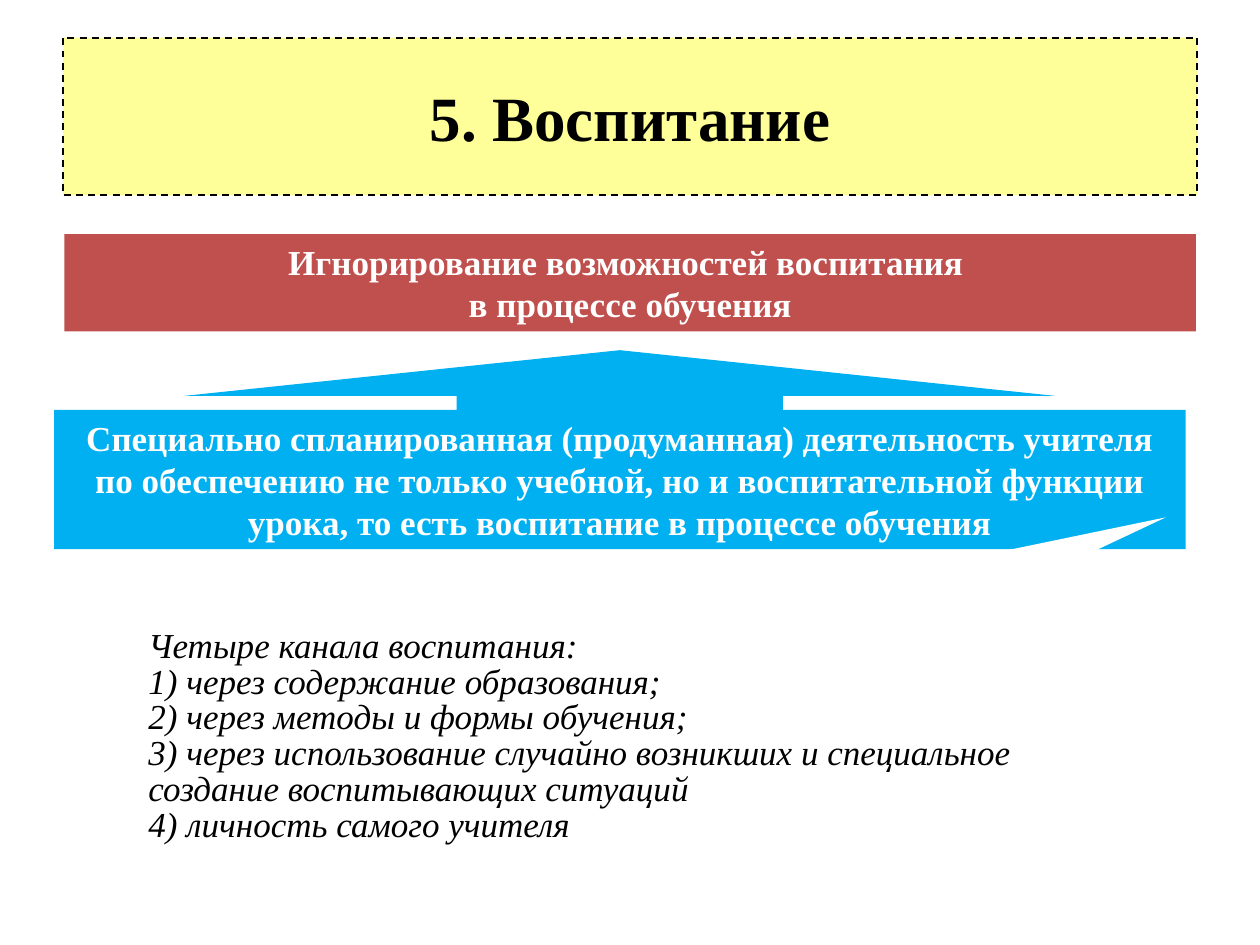
import pptx
import pptx.util
import pptx.dml.color
import pptx.enum.dml
import pptx.enum.shapes
import pptx.enum.text

Cm = pptx.util.Cm
Color = pptx.dml.color.RGBColor
Kind = pptx.enum.shapes.MSO_SHAPE
Align = pptx.enum.text.PP_ALIGN
Anchor = pptx.enum.text.MSO_ANCHOR

BLACK = Color(0x00, 0x00, 0x00)
WHITE = Color(0xFF, 0xFF, 0xFF)
YELLOW = Color(0xFF, 0xFF, 0x99)
RED = Color(0xC0, 0x50, 0x4D)
BLUE = Color(0x00, 0xB0, 0xF0)
FONT = "Times New Roman"


def add_block(slide, kind, box, fill, adjust=()):
    """Add a flat filled shape without outline; box is in centimetres."""
    shape = slide.shapes.add_shape(kind, *(Cm(n) for n in box))
    shape.shadow.inherit = False
    shape.fill.solid()
    shape.fill.fore_color.rgb = fill
    shape.line.fill.background()
    for i, value in enumerate(adjust):
        shape.adjustments[i] = value
    return shape


def set_text(shape, text, color, size=20, align=Align.CENTER,
             anchor=Anchor.TOP, bold=True, italic=False, spacing=None):
    frame = shape.text_frame
    frame.word_wrap = True
    frame.vertical_anchor = anchor
    frame.text = text
    for para in frame.paragraphs:
        para.alignment = align
        para.line_spacing = spacing
        for run in para.runs:
            font = run.font
            font.name = FONT
            font.size = pptx.util.Pt(size)
            font.bold = bold
            font.italic = italic
            font.color.rgb = color


def add_title(slide, box):
    shape = add_block(slide, Kind.RECTANGLE, box, YELLOW)
    shape.line.color.rgb = BLACK
    shape.line.width = pptx.util.Pt(1)
    shape.line.dash_style = pptx.enum.dml.MSO_LINE.DASH
    set_text(shape, "5. Воспитание", BLACK, size=36, anchor=Anchor.MIDDLE)


def add_answer(slide, box):
    shape = add_block(slide, Kind.UP_ARROW_CALLOUT, box, BLUE,
                      (1.64, 2.19, 0.23, 0.7))
    set_text(shape, "Специально спланированная (продуманная) деятельность "
             "учителя по обеспечению не только учебной, но и воспитательной "
             "функции урока, то есть воспитание в процессе обучения", WHITE)


def add_problem(slide, box):
    shape = add_block(slide, Kind.RECTANGLE, box, RED)
    set_text(shape, "Игнорирование возможностей воспитания \n"
             "в процессе обучения", WHITE)


def add_list(slide, box):
    shape = add_block(slide, Kind.ROUNDED_RECTANGULAR_CALLOUT, box, WHITE,
                      (0.53, -0.87, 0.17))
    lines = [
        "Четыре канала воспитания:",
        "1) через содержание образования;",
        "2) через методы и формы обучения;",
        "3) через использование случайно возникших и специальное "
        "создание воспитывающих ситуаций",
        "4) личность самого учителя",
    ]
    set_text(shape, "\n".join(lines), BLACK, align=Align.LEFT,
             bold=False, italic=True, spacing=0.85)


def main():
    deck = pptx.Presentation()
    deck.slide_width, deck.slide_height = Cm(25.4), Cm(19.05)
    slide = deck.slides.add_slide(deck.slide_layouts[6])

    # Title, then the measure pointing up at the problem
    add_title(slide, (1.27, 0.76, 22.86, 3.18))
    add_answer(slide, (1.09, 7.06, 22.81, 4.01))
    add_problem(slide, (1.3, 4.72, 22.81, 1.96))
    # Callout whose tail reaches into the measure
    add_list(slide, (2.49, 12.32, 20.4, 5.11))

    deck.save("out.pptx")


if __name__ == "__main__":
    main()
